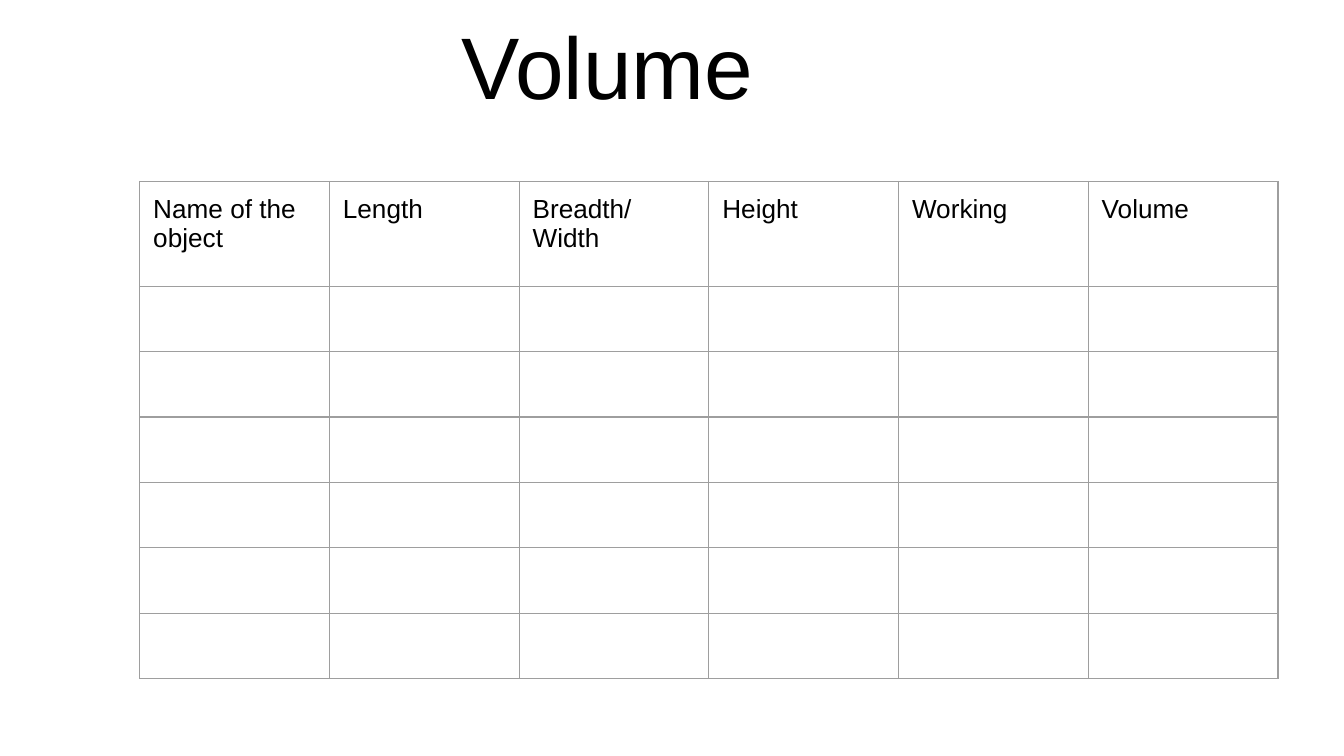
from lxml import etree
from pptx import Presentation
from pptx.dml.color import RGBColor
from pptx.enum import text
from pptx.oxml.ns import qn
from pptx.util import Inches, Pt

HEADERS = ["Name of the object", "Length", "Breadth/Width", "Height", "Working", "Volume"]
BLANK_ROWS = 6
TABLE_W, TABLE_H, HEADER_H = 8.47, 3.7, 0.78


def style_runs(p, size, color="000000"):
    for r in p.runs:
        r.font.name = "Arial"
        r.font.size = Pt(size)
        r.font.color.rgb = RGBColor.from_string(color)


def add_borders(cell, color, width):
    tcPr = cell._tc.get_or_add_tcPr()
    for i, side in enumerate(("lnL", "lnR", "lnT", "lnB")):
        ln = etree.Element(qn(f"a:{side}"), w=str(Pt(width)))
        fill = etree.SubElement(ln, qn("a:solidFill"))
        etree.SubElement(fill, qn("a:srgbClr"), val=color)
        tcPr.insert(i, ln)


prs = Presentation()
prs.slide_width = Inches(10)
prs.slide_height = Inches(10 * 9 / 16)
s = prs.slides.add_slide(prs.slide_layouts[0])
subtitle = s.placeholders[1].element
subtitle.getparent().remove(subtitle)

# Title
title = s.shapes.title
title.left, title.top = Inches(0), Inches(0.07)
title.width, title.height = Inches(9.04), Inches(0.9)
tf = title.text_frame
tf.text = "Volume"
tf.auto_size = text.MSO_AUTO_SIZE.NONE
tf.vertical_anchor = text.MSO_ANCHOR.BOTTOM
tf.margin_left = tf.margin_right = tf.margin_top = tf.margin_bottom = Inches(0.1)
p = tf.paragraphs[0]
p.alignment = text.PP_ALIGN.CENTER
style_runs(p, 46.8)

# Recording table: a header row above blank rows
table = s.shapes.add_table(
    BLANK_ROWS + 1, len(HEADERS), Inches(1.04), Inches(1.35),
    Inches(TABLE_W), Inches(TABLE_H)).table
table.first_row = table.horz_banding = False
for col in table.columns:
    col.width = Inches(TABLE_W / len(HEADERS))
for i, row in enumerate(table.rows):
    row.height = Inches((TABLE_H - HEADER_H) / BLANK_ROWS if i else HEADER_H)
    for cell in row.cells:
        cell.fill.background()
        add_borders(cell, "9E9E9E", 0.75)

for cell, header in zip(table.rows[0].cells, HEADERS):
    cell.text_frame.text = header
    cell.margin_left = cell.margin_right = Inches(0.1)
    cell.margin_top = cell.margin_bottom = Inches(0.1)
    style_runs(cell.text_frame.paragraphs[0], 14)

prs.save("out.pptx")
